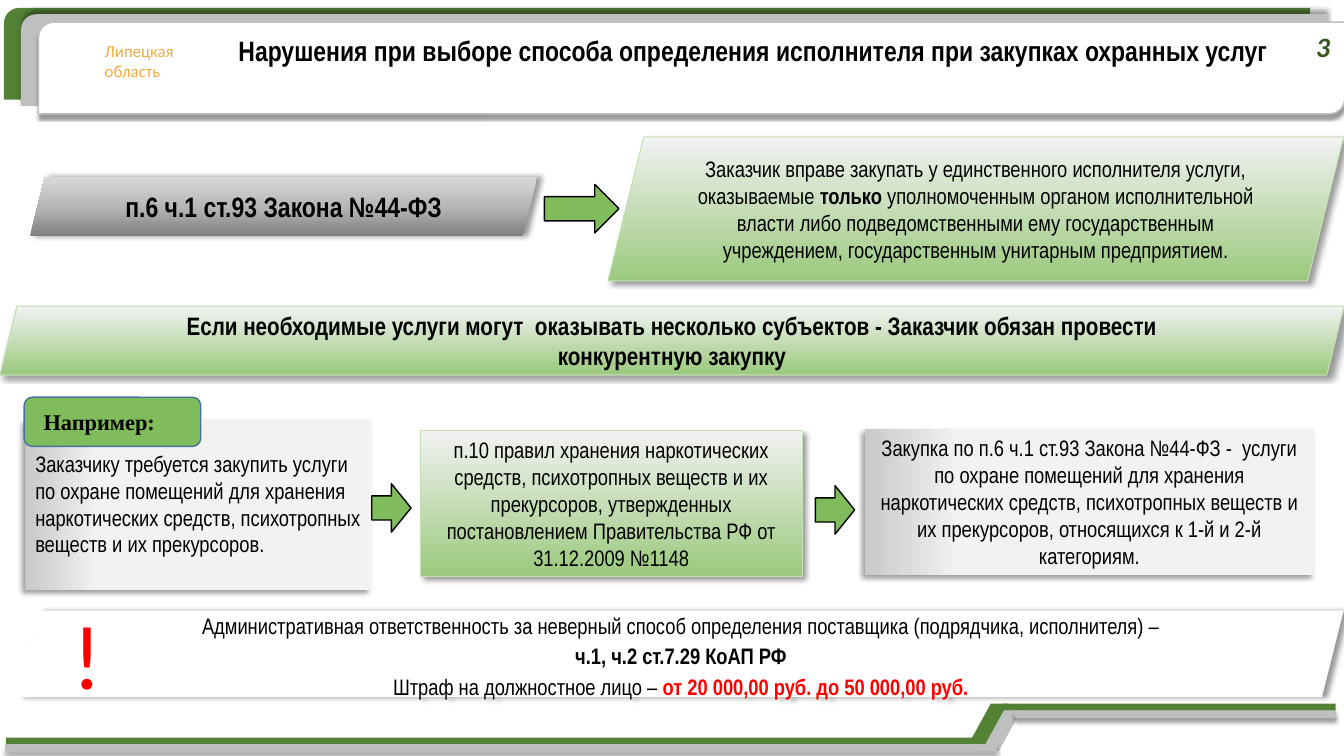
import pptx
import pptx.util
import pptx.dml.color
import pptx.enum.shapes
import pptx.enum.text
import pptx.oxml
import pptx.oxml.ns
from lxml import etree

Cm = pptx.util.Cm
Pt = pptx.util.Pt
SHAPES = pptx.enum.shapes.MSO_SHAPE
ALIGN = pptx.enum.text.PP_ALIGN
ANCHOR = pptx.enum.text.MSO_ANCHOR
qn = pptx.oxml.ns.qn

COLORS = {
    "black": "000000", "white": "FFFFFF", "red": "FF0000", "orange": "F2AC44",
    "dark_green": "548235", "number_green": "385723", "green": "81BC5C",
    "fade_green": "9AC97D", "edge_green": "C5E0B4", "gray": "BFBFBF",
    "steel": "808080", "mid_steel": "B7B7B7", "light_steel": "D9D9D9",
    "fade_gray": "C9C9C9", "pale": "F2F2F2", "blue": "43739E",
}
GREEN_FADE = (90, [(0, "fade_green"), (100, "pale")])
STEEL_FADE = (90, [(0, "steel"), (50, "mid_steel"), (100, "light_steel")])
SIDE_FADE = (0, [(0, "fade_gray"), (21, "pale")])

NARROW = {"name": "Arial Narrow", "size": Pt(16), "bold": False, "color": "black"}
STRONG = {**NARROW, "bold": True}
ALERT = {**STRONG, "color": "red"}
HEADING = {**STRONG, "size": Pt(20)}
TIGHT = dict.fromkeys(("margin_left", "margin_top", "margin_right", "margin_bottom"), Cm(0.1))
NO_MARGINS = dict.fromkeys(TIGHT, 0)
MIDDLE = {"vertical_anchor": ANCHOR.MIDDLE}
TOP = {"vertical_anchor": ANCHOR.TOP}
CENTER = {"alignment": ALIGN.CENTER}
LEFT = {"alignment": ALIGN.LEFT}


def rgb(color):
    return pptx.dml.color.RGBColor.from_string(COLORS[color])


def apply_format(target, values):
    for name, value in values.items():
        if name == "color":
            target.color.rgb = rgb(value)
        else:
            setattr(target, name, value)


def write_text(shape, paragraphs, frame_format, paragraph_format):
    frame = shape.text_frame
    apply_format(frame, {"word_wrap": True, "auto_size": pptx.enum.text.MSO_AUTO_SIZE.NONE, **frame_format})
    for index, runs in enumerate(paragraphs):
        paragraph = frame.paragraphs[0] if index == 0 else frame.add_paragraph()
        apply_format(paragraph, paragraph_format)
        for text, font_format in runs:
            run = paragraph.add_run()
            run.text = text
            apply_format(run.font, font_format)


def set_gradient(shape, angle, stops):
    shape.fill.gradient()
    shape.fill.gradient_angle = angle
    stop_list = shape.fill._xPr.find(qn("a:gradFill")).find(qn("a:gsLst"))
    for stop in list(stop_list):
        stop_list.remove(stop)
    for position, color in stops:
        stop = etree.SubElement(stop_list, qn("a:gs"), pos=str(position * 1000))
        etree.SubElement(stop, qn("a:srgbClr"), val=COLORS[color])


def set_shadow(shape, blur, distance, direction):
    effects = shape._element.spPr.find(qn("a:effectLst"))
    shadow = etree.SubElement(
        effects, qn("a:outerShdw"), blurRad=str(Pt(blur)), dist=str(Pt(distance)),
        dir=str(direction * 60000), algn="ctr", rotWithShape="0")
    color = etree.SubElement(shadow, qn("a:srgbClr"), val=COLORS["black"])
    etree.SubElement(color, qn("a:alpha"), val="40000")


def style_shape(shape, fill, line=None, shadow=None):
    if isinstance(fill, tuple):
        set_gradient(shape, *fill)
    else:
        shape.fill.solid()
        shape.fill.fore_color.rgb = rgb(fill)
    if line:
        color, width = line
        shape.line.color.rgb = rgb(color)
        shape.line.width = Pt(width)
    else:
        shape.line.fill.background()
    shape.shadow.inherit = False
    if shadow:
        set_shadow(shape, *shadow)


def add_panel(slide, kind, box, fill, line=None, shadow=None):
    shape = slide.shapes.add_shape(kind, *map(Cm, box))
    style_shape(shape, fill, line, shadow)
    return shape


def add_green_panel(slide, kind, box, runs):
    shape = add_panel(slide, kind, box, GREEN_FADE, ("edge_green", 0.75), (4, 3, 45))
    write_text(shape, [runs], {**TIGHT, **MIDDLE}, CENTER)


def add_label(slide, box, paragraphs, frame_format, paragraph_format):
    label = slide.shapes.add_textbox(*map(Cm, box))
    write_text(label, paragraphs, frame_format, paragraph_format)


def add_slant(slide, left, top, color):
    outline = [(0, 1.02), (0.56, 0), (0.99, 0), (0.43, 1.02)]
    points = [(Cm(left + x), Cm(top + y)) for x, y in outline]
    builder = slide.shapes.build_freeform(*points[0], scale=1.0)
    builder.add_line_segments(points[1:], close=True)
    style_shape(builder.convert_to_shape(), color)


def add_frame(slide):
    layers = [
        (0.1, 0.2, "dark_green", None, None),
        (0.53, 0.36, "gray", None, (4, 3, 270)),
        (0.97, 0.56, "white", ("gray", 1), (2, 3, 90)),
    ]
    for left, top, fill, line, shadow in layers:
        add_panel(slide, SHAPES.ROUND_2_DIAG_RECTANGLE, (left, top, 32.92, 2.31), fill, line, shadow)
    region = {"name": "Calibri", "size": Pt(12), "color": "orange"}
    add_label(slide, (2.39, 0.91, 2.31, 1.27), [[("Липецкая", region)], [("область", region)]], TOP, LEFT)
    ribbons = [
        ("dark_green", (24.41, 17.73), [(0.15, 18.59, 24.69), (25.25, 17.73, 8.41)], None),
        ("gray", (24.74, 17.91), [(0.13, 18.75, 24.99), (25.58, 17.91, 8.1)], (3, 3, 90)),
    ]
    for color, slant, bars, shadow in ribbons:
        add_slant(slide, *slant, color)
        for left, top, width in bars:
            add_panel(slide, SHAPES.RECTANGLE, (left, top, width, 0.18), color, None, shadow)


def add_title(slide):
    title = slide.shapes.title
    apply_format(title, {"left": Cm(5.16), "top": Cm(0.71), "width": Cm(27.64), "height": Cm(1.12)})
    text = "Нарушения при выборе способа определения исполнителя при закупках охранных услуг"
    write_text(title, [[(text, HEADING)]], TOP, CENTER)
    slide.shapes._spTree.append(title._element)
    number = {"name": "Calibri", "size": Pt(20), "bold": True, "italic": True, "color": "number_green"}
    add_label(slide, (32.89, 0.69, 0.9, 0.94), [[("3", number)]], {**NO_MARGINS, **MIDDLE}, CENTER)


def add_law(slide):
    add_green_panel(slide, SHAPES.PARALLELOGRAM, (0, 7.72, 33.87, 1.73), [(
        "Если необходимые услуги могут  оказывать несколько субъектов - Заказчик обязан провести "
        "конкурентную закупку", {**STRONG, "size": Pt(18)})])
    add_green_panel(slide, SHAPES.PARALLELOGRAM, (15.32, 3.45, 18.54, 3.63), [
        ("Заказчик вправе закупать у единственного исполнителя услуги, оказываемые ", NARROW),
        ("только", STRONG),
        (" уполномоченным органом исполнительной власти либо подведомственными ему государственным "
         "учреждением, государственным унитарным предприятием.", NARROW)])
    law = add_panel(slide, SHAPES.PARALLELOGRAM, (0.76, 4.45, 12.78, 1.5), STEEL_FADE, None, (4, 3, 0))
    write_text(law, [[("п.6 ч.1 ст.93 Закона №44-ФЗ", HEADING)]], MIDDLE, CENTER)


def add_liability(slide):
    panel = add_panel(slide, SHAPES.PARALLELOGRAM, (0.46, 15.39, 33.4, 2.18), "white", None, (4, 3, 0))
    write_text(panel, [
        [("Административная ответственность за неверный способ определения поставщика "
          "(подрядчика, исполнителя) –", NARROW)],
        [("ч.1, ч.2 ст.7.29 КоАП РФ", STRONG)],
        [("Штраф на должностное лицо – ", NARROW), ("от 20 000,00 руб. до 50 000,00 руб.", ALERT)],
    ], MIDDLE, {**CENTER, "line_spacing": 1.15})
    mark = {"name": "Calibri", "size": Pt(65), "color": "red"}
    add_label(slide, (1.42, 14.96, 1.57, 3.02), [[("!", mark)]], TOP, CENTER)


def add_example(slide):
    need = add_panel(slide, SHAPES.RECTANGLE, (0.64, 10.59, 8.71, 4.27), SIDE_FADE, None, (4, 3, 135))
    write_text(need, [[(
        "Заказчику требуется закупить услуги по охране помещений для хранения наркотических средств, "
        "психотропных веществ и их прекурсоров.", NARROW)]], {**TOP, "margin_top": Cm(0.75)}, LEFT)
    tag = add_panel(slide, SHAPES.ROUNDED_RECTANGLE, (0.61, 10.01, 4.45, 1.24), "green", ("blue", 1))
    write_text(tag, [[("Например:", {**STRONG, "name": "Times New Roman"})]],
               {**MIDDLE, "margin_left": Cm(0.43)}, LEFT)
    add_green_panel(slide, SHAPES.RECTANGLE, (10.59, 10.85, 9.63, 3.68), [(
        "п.10 правил хранения наркотических средств, психотропных веществ и их прекурсоров, утвержденных "
        "постановлением Правительства РФ от 31.12.2009 №1148", NARROW)])
    purchase = add_panel(slide, SHAPES.RECTANGLE, (21.79, 10.82, 11.33, 3.68), SIDE_FADE, None, (4, 3, 135))
    write_text(purchase, [[(
        "Закупка по п.6 ч.1 ст.93 Закона №44-ФЗ -  услуги по охране помещений для хранения наркотических "
        "средств, психотропных веществ и их прекурсоров, относящихся к 1-й и 2-й категориям.", NARROW)]],
        TOP, CENTER)


def add_arrows(slide):
    for left, top, width in [(13.72, 4.65, 1.88), (9.37, 12.19, 0.99), (20.55, 12.24, 0.99)]:
        add_panel(slide, SHAPES.RIGHT_ARROW, (left, top, width, 1.22), "green", ("black", 1))


def main():
    presentation = pptx.Presentation()
    apply_format(presentation, {"slide_width": Cm(33.87), "slide_height": Cm(19.05)})
    slide = presentation.slides.add_slide(presentation.slide_layouts[5])
    add_frame(slide)
    add_title(slide)
    add_law(slide)
    add_liability(slide)
    add_example(slide)
    add_arrows(slide)
    presentation.save("out.pptx")


if __name__ == "__main__":
    main()
